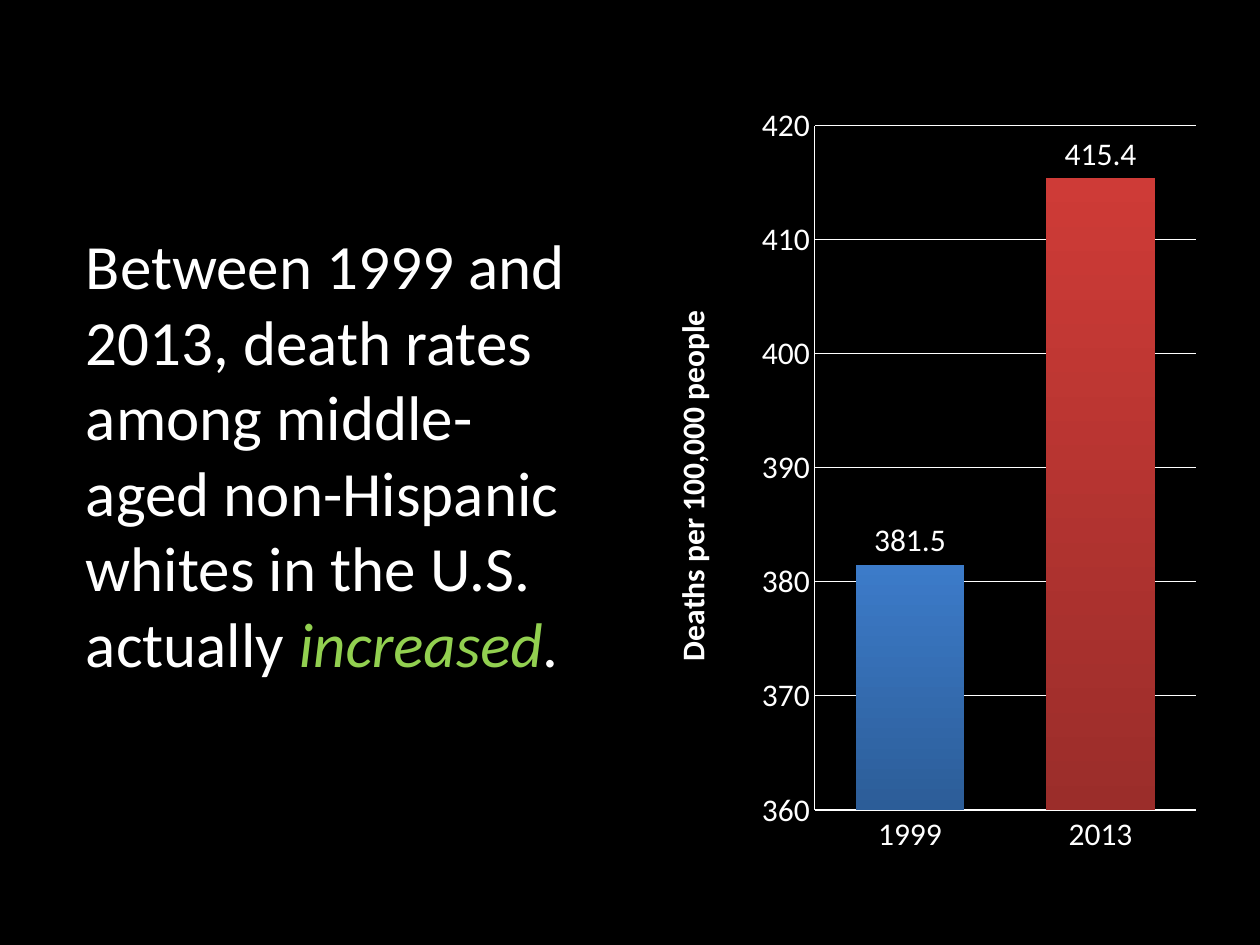
import pptx
import pptx.chart.data
import pptx.dml.color
import pptx.enum.chart
import pptx.enum.text
import pptx.oxml
import pptx.oxml.ns
import pptx.util

COLORS = {
    "background": "000000",
    "text": "FFFFFF",
    "accent": "92D050",
}
BAR_GRADIENTS = [("2C5D98", "3C7BC9"), ("9B2D2A", "CE3B37")]
FONT = "Calibri"


def write_span(para, text, size=18, color="text", bold=False, italic=False):
    span = para.add_run()
    span.text = text
    span.font.name = FONT
    span.font.size = pptx.util.Pt(size)
    span.font.bold = bold
    span.font.italic = italic
    span.font.color.rgb = pptx.dml.color.RGBColor.from_string(COLORS[color])


def place_in_chart(element, index, **shares):
    for old_layout in element.findall(pptx.oxml.ns.qn("c:layout")):
        element.remove(old_layout)
    target = '<c:layoutTarget val="inner"/>' if "w" in shares else ""
    modes = '<c:xMode val="edge"/><c:yMode val="edge"/>'
    values = "".join(f'<c:{key} val="{share}"/>' for key, share in shares.items())
    layout = pptx.oxml.parse_xml(
        f'<c:layout {pptx.oxml.ns.nsdecls("c")}><c:manualLayout>'
        f"{target}{modes}{values}</c:manualLayout></c:layout>"
    )
    element.insert(index, layout)


deck = pptx.Presentation()
deck.slide_width = pptx.util.Inches(10)
deck.slide_height = pptx.util.Inches(7.5)
column = deck.slide_width // 12
row = deck.slide_height // 10
white = pptx.dml.color.RGBColor.from_string(COLORS["text"])

page = deck.slides.add_slide(deck.slide_layouts[6])
page.background.fill.solid()
page.background.fill.fore_color.rgb = pptx.dml.color.RGBColor.from_string(COLORS["background"])

box = page.shapes.add_textbox(int(column * 0.7), int(row * 2.33), column * 5, row * 5)
frame = box.text_frame
frame.word_wrap = True
frame.auto_size = pptx.enum.text.MSO_AUTO_SIZE.SHAPE_TO_FIT_TEXT
para = frame.paragraphs[0]
write_span(
    para,
    "Between 1999 and 2013, death rates among middle-aged non-Hispanic whites in the U.S. actually ",
    size=36,
)
write_span(para, "increased", size=36, color="accent", italic=True)
write_span(para, ".", size=36)

data = pptx.chart.data.CategoryChartData()
data.categories = ["1999", "2013"]
data.add_series("Series 1", [381.5, 415.4])
chart = page.shapes.add_chart(
    pptx.enum.chart.XL_CHART_TYPE.COLUMN_CLUSTERED,
    column * 6, row, int(column * 5.5), int(row * 8.23), data,
).chart
chart.has_legend = False
chart.has_title = False
chart.font.name = FONT
chart.font.size = pptx.util.Pt(18)
chart.font.color.rgb = white

plot = chart.plots[0]
plot.gap_width = 75
plot.vary_by_categories = False
plot.has_data_labels = True
plot.data_labels.show_value = True
plot.data_labels.position = pptx.enum.chart.XL_LABEL_POSITION.OUTSIDE_END

for index, gradient in enumerate(BAR_GRADIENTS):
    fill = plot.series[0].points[index].format.fill
    fill.gradient()
    fill.gradient_angle = 90
    for stop, color in zip(fill.gradient_stops, gradient):
        stop.color.rgb = pptx.dml.color.RGBColor.from_string(color)

value_axis = chart.value_axis
value_axis.minimum_scale = 360
value_axis.maximum_scale = 420
value_axis.major_unit = 10
value_axis.has_major_gridlines = True
for axis in (chart.category_axis, value_axis):
    axis.major_tick_mark = pptx.enum.chart.XL_TICK_MARK.NONE
    axis.minor_tick_mark = pptx.enum.chart.XL_TICK_MARK.NONE
for line in (
    chart.category_axis.format.line,
    value_axis.format.line,
    value_axis.major_gridlines.format.line,
):
    line.color.rgb = white
    line.width = pptx.util.Pt(0.75)

title = value_axis.axis_title
write_span(title.text_frame.paragraphs[0], "Deaths per 100,000 people", bold=True)
title.text_frame._txBody.bodyPr.set("rot", "-5400000")
title.text_frame._txBody.bodyPr.set("vert", "horz")
place_in_chart(title._element, 1, x=0.06, y=0.27)
plot_area = chart._chartSpace.chart.plotArea
place_in_chart(plot_area, 0, x=0.32, y=0.04, w=0.66, h=0.88)

deck.save("out.pptx")
